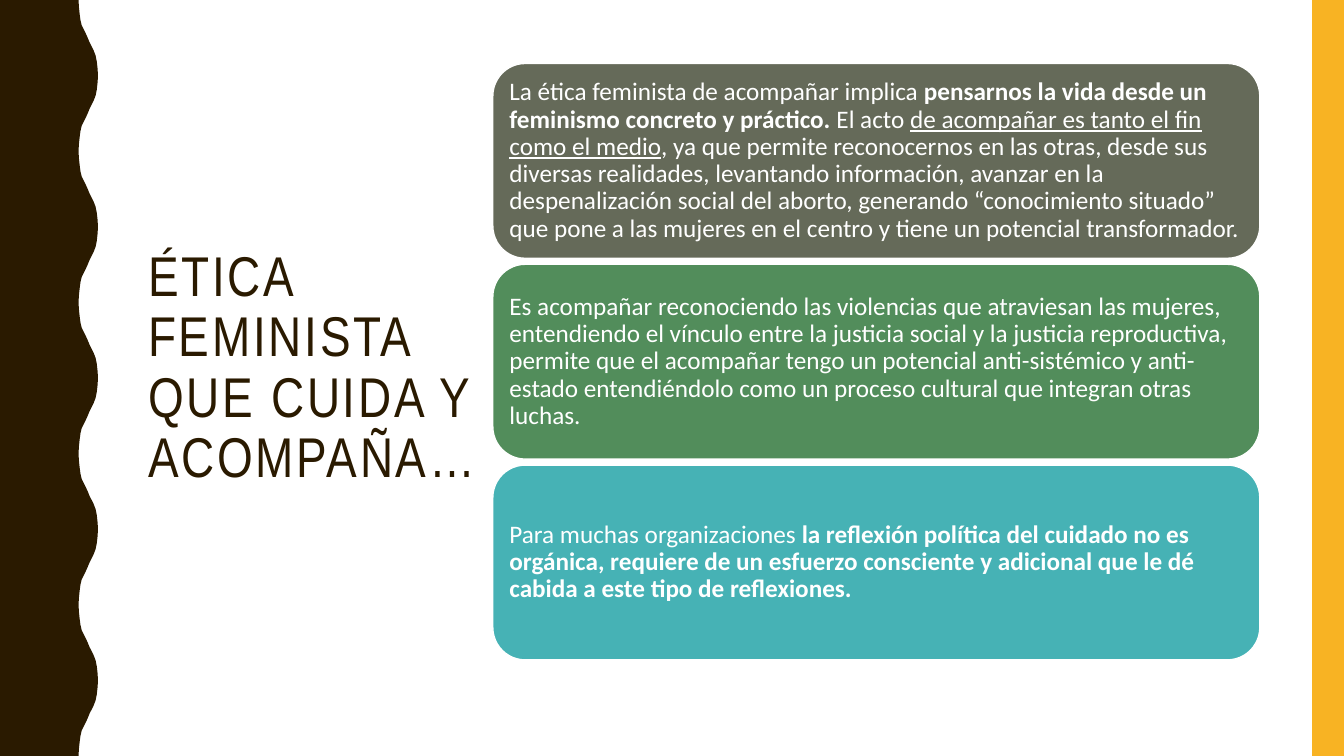
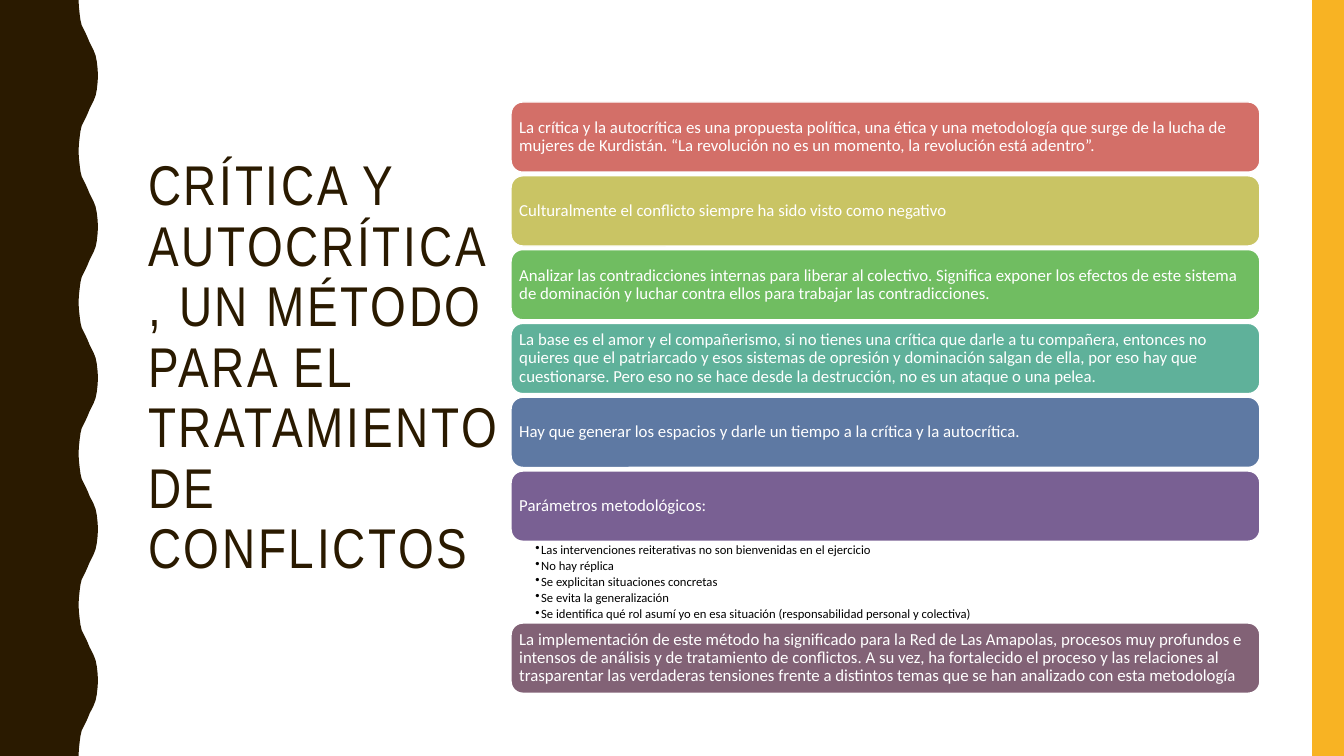
"""Build two slides on feminist ethics and on self-criticism as a method."""
from lxml.etree import SubElement
from pptx import Presentation
from pptx.dml.color import RGBColor
from pptx.enum.shapes import MSO_SHAPE as Kind
from pptx.enum.text import MSO_ANCHOR as Anchor, MSO_AUTO_SIZE as Auto, PP_ALIGN as Align
from pptx.oxml.ns import qn
from pptx.util import Cm, Pt

BROWN, GOLD, WHITE, BLACK = "2A1A00", "F8B323", "FFFFFF", "000000"
WIDE, HIGH, BAND = 33.87, 19.05, 0.8
CREST, WAVE = 3.81, 5
HALF = [(1.98, 0), (1.99, 0.18), (2.01, 0.36), (2.03, 0.51), (2.06, 0.64),
        (2.11, 0.74), (2.16, 0.84), (2.21, 0.95), (2.26, 1.07), (2.31, 1.17),
        (2.36, 1.27), (2.41, 1.4), (2.44, 1.55), (2.46, 1.73), (2.47, 1.9)]
TITLE = {"left": Cm(3.48), "top": Cm(1.78), "width": Cm(9.4), "height": Cm(15.04)}
HEAD = {"name": "Arial Narrow", "size": Pt(40)}
BOLD, LINE = {"bold": True}, {"underline": True}
RULES = ["Las intervenciones reiterativas no son bienvenidas en el ejercicio",
         "No hay réplica",
         "Se explicitan situaciones concretas",
         "Se evita la generalización",
         "Se identifica qué rol asumí yo en esa situación (responsabilidad personal y colectiva)"]
NOTE = {"high": 2.06, "size": 9}

SLIDES = [
    {"title": "ÉTICA FEMINISTA QUE CUIDA Y ACOMPAÑA…",
     "left": 12.42, "top": 1.6, "wide": 19.33, "high": 4.91, "gap": 0.15,
     "pad": 0.18, "size": 18,
     "cards": [
         ("656A59", [
             ("La ética feminista de acompañar implica ", {}),
             ("pensarnos la vida desde un feminismo concreto y práctico. ", BOLD),
             ("El acto ", {}),
             ("de acompañar es tanto el fin como el medio", LINE),
             (", ya que permite reconocernos en las otras, desde sus diversas realidades, "
              "levantando información, avanzar en la despenalización social del aborto, "
              "generando “conocimiento situado” que pone a las mujeres en el centro y tiene "
              "un potencial transformador.", {})], []),
         ("528D5B", [
             ("Es acompañar reconociendo las violencias que atraviesan las mujeres, "
              "entendiendo el vínculo entre la justicia social y la justicia reproductiva, "
              "permite que el acompañar tengo un potencial anti-sistémico y anti- estado "
              "entendiéndolo como un proceso cultural que integran otras luchas.", {})], []),
         ("46B2B5", [
             ("Para muchas organizaciones ", {}),
             ("la reflexión política del cuidado no es orgánica, requiere de un esfuerzo "
              "consciente y adicional que le dé cabida a este tipo de reflexiones.", BOLD)], []),
     ]},
    {"title": "CRÍTICA Y AUTOCRÍTICA, UN MÉTODO PARA EL TRATAMIENTO DE CONFLICTOS",
     "left": 12.88, "top": 2.57, "wide": 18.87, "high": 1.77, "gap": 0.09,
     "pad": 0.12, "size": 12,
     "cards": [
         ("D36F68", [
             ("La crítica y la autocrítica es una propuesta política, una ética y una "
              "metodología que surge de la lucha de mujeres de Kurdistán. “La revolución no "
              "es un momento, la revolución está adentro”.", {})], []),
         ("C9C464", [
             ("Culturalmente el conflicto siempre ha sido visto como negativo", {})], []),
         ("70BD61", [
             ("Analizar las contradicciones internas para liberar al colectivo. Significa "
              "exponer los efectos de este sistema de dominación y luchar contra ellos para "
              "trabajar las contradicciones.", {})], []),
         ("5FB19A", [
             ("La base es el amor y el compañerismo, si no tienes una crítica que darle a tu "
              "compañera, entonces no quieres que el patriarcado y esos sistemas de opresión "
              "y dominación salgan de ella, por eso hay que cuestionarse. Pero eso no se hace "
              "desde la destrucción, no es un ataque o una pelea.", {})], []),
         ("5E79A3", [
             ("Hay que generar los espacios y darle un tiempo a la crítica y la autocrítica.",
              {})], []),
         ("796093", [("Parámetros metodológicos:", {})], RULES),
         ("826276", [
             ("La implementación de este método ha significado para la Red de Las Amapolas, "
              "procesos muy profundos e intensos de análisis y de tratamiento de conflictos. "
              "A su vez, ha fortalecido el proceso y las relaciones al trasparentar las "
              "verdaderas tensiones frente a distintos temas que se han analizado con esta "
              "metodología", {})], []),
     ]},
]


def tint(part, code):
    part.rgb = RGBColor.from_string(code)


def put(item, vals):
    for key, val in vals.items():
        setattr(item, key, val)


def paint(shape, code, edge=None):
    shape.shadow.inherit = False
    shape.fill.solid()
    tint(shape.fill.fore_color, code)
    if edge:
        shape.line.width = Pt(1)
        tint(shape.line.color, edge)
    else:
        shape.line.fill.background()


def write(para, runs, font, code):
    put(para, {"alignment": Align.LEFT, "line_spacing": 0.9})
    for text, extra in runs:
        run = para.add_run()
        run.text = text
        put(run.font, {**font, **extra})
        tint(run.font.color, code)


def frame(shape, anchor, pads):
    body = shape.text_frame
    sides = ("margin_left", "margin_top", "margin_right", "margin_bottom")
    put(body, {"word_wrap": True, "auto_size": Auto.NONE, "vertical_anchor": anchor})
    put(body, dict(zip(sides, map(Cm, pads))))
    return body


def dress(layout, slide):
    spots = []
    for turn in range(WAVE):
        base = turn * CREST
        spots += [(x, base + y) for x, y in HALF]
        spots += [(x, base + CREST - y) for x, y in reversed(HALF)]
    spots.append((0, HIGH))
    pen = slide.shapes.build_freeform(0, 0, 1.0)
    pen.add_line_segments([(Cm(x), Cm(y)) for x, y in spots], close=True)
    wave = pen.convert_to_shape()
    band = slide.shapes.add_shape(Kind.RECTANGLE, Cm(WIDE - BAND), 0, Cm(BAND), Cm(HIGH))
    for spot, (shape, code) in enumerate([(wave, BROWN), (band, GOLD)], 2):
        paint(shape, code)
        layout.shapes.element.insert(spot, shape.element)
    put(layout.placeholders[0], TITLE)


def head(slide, text):
    body = frame(slide.shapes.title, Anchor.MIDDLE, (0.25, 0.13, 0.25, 0.13))
    para = body.paragraphs[0]
    write(para, [(text, {})], HEAD, BROWN)
    para.runs[0].font._element.set("spc", "200")


def notes(slide, lines, box):
    body = frame(slide.shapes.add_textbox(*map(Cm, box)), Anchor.TOP, (0.61, 0.05, 0.23, 0.05))
    for row, text in enumerate(lines):
        para = body.add_paragraph() if row else body.paragraphs[0]
        write(para, [(text, {})], {"name": "Calibri", "size": Pt(NOTE["size"])}, BLACK)
        put(para, {"level": 1, "space_after": Pt(1.8)})
        props = para._p.get_or_add_pPr()
        props.set("marL", str(Cm(0.15)))
        props.set("indent", str(-Cm(0.15)))
        SubElement(props, qn("a:buChar")).set("char", "•")


def stack(slide, data):
    left, wide, high = data["left"], data["wide"], data["high"]
    font = {"name": "Calibri", "size": Pt(data["size"])}
    top = data["top"]
    for code, runs, lines in data["cards"]:
        card = slide.shapes.add_shape(Kind.ROUNDED_RECTANGLE, *map(Cm, (left, top, wide, high)))
        paint(card, code, WHITE)
        body = frame(card, Anchor.MIDDLE, [data["pad"]] * 4)
        write(body.paragraphs[0], runs, font, WHITE)
        top += high
        if lines:
            notes(slide, lines, (left, top, wide, NOTE["high"]))
        top += NOTE["high"] if lines else data["gap"]


def main():
    deck = Presentation()
    put(deck, {"slide_width": Cm(WIDE), "slide_height": Cm(HIGH)})
    layout = deck.slide_layouts[5]
    for count, data in enumerate(SLIDES):
        slide = deck.slides.add_slide(layout)
        if not count:
            dress(layout, slide)
        head(slide, data["title"])
        stack(slide, data)
    deck.save("out.pptx")


if __name__ == "__main__":
    main()
